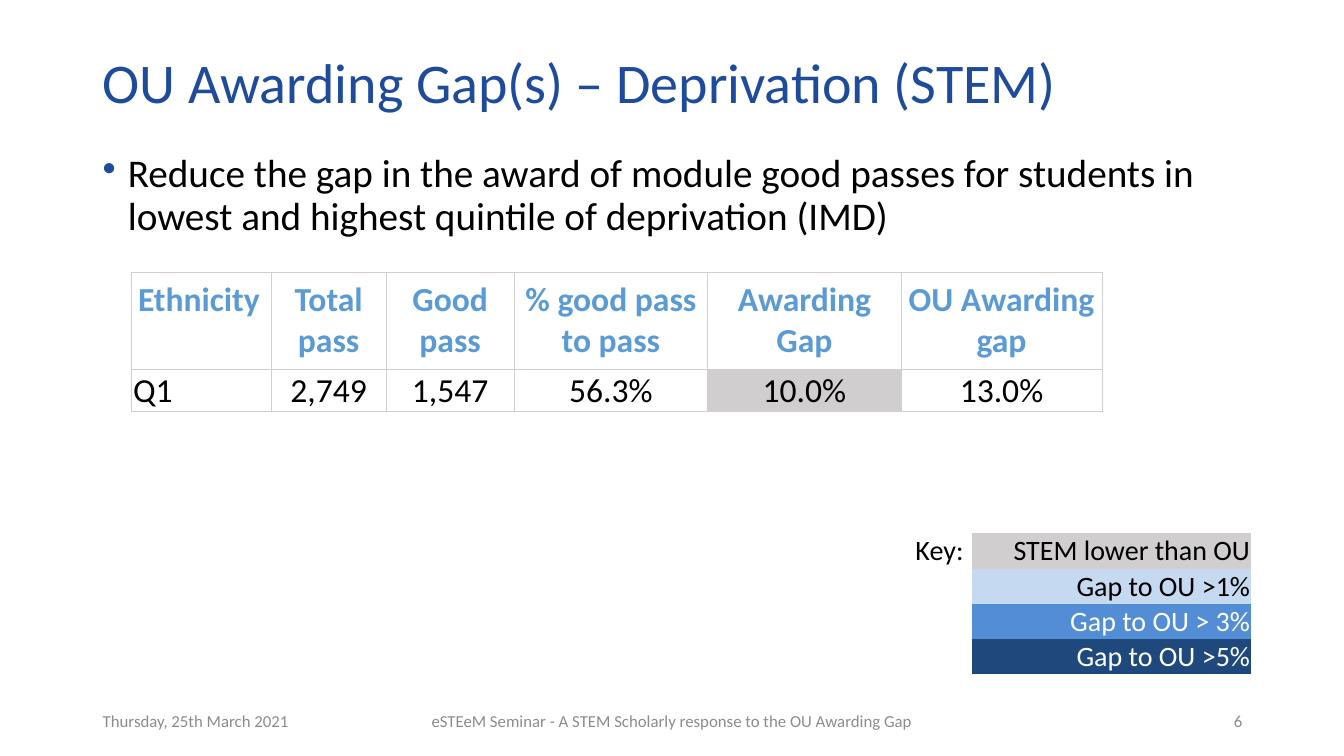
from dataclasses import dataclass

from lxml import etree
from pptx import Presentation
from pptx import util as u
from pptx.dml.color import RGBColor
from pptx.enum import text
from pptx.oxml import ns

PX = 9144  # EMU in one px, 100 px to the inch
FONT = "Calibri"
COLORS = {
    "title": "1E4B9B",
    "ink": "000000",
    "footer": "8C8C8C",
    "header": "5B9BD5",
    "grey": "D0CECE",
    "pale": "C5D9F1",
    "mid": "538DD5",
    "dark": "1F497D",
    "white": "FFFFFF",
}
NO_STYLE = "{2D5ABB26-0587-4C30-8999-92F81FD0307C}"
LEFT, CENTER, RIGHT = text.PP_ALIGN.LEFT, text.PP_ALIGN.CENTER, text.PP_ALIGN.RIGHT
TOP, MIDDLE = text.MSO_ANCHOR.TOP, text.MSO_ANCHOR.MIDDLE


@dataclass(frozen=True)
class Style:
    size: int
    color: str = "ink"
    bold: bool = False
    align: text.PP_ALIGN = LEFT
    anchor: text.MSO_ANCHOR = MIDDLE
    spacing: float = 1.0


@dataclass(frozen=True)
class Label:
    words: str
    box: tuple[int, int, int, int]
    style: Style
    bullet: bool = False


@dataclass(frozen=True)
class Cell:
    words: str
    style: Style
    margins: tuple[int, int, int, int]
    fill: str | None = None
    border: str | None = None


LABELS = [
    Label("OU Awarding Gap(s) – Deprivation (STEM)", (92, 40, 1150, 90),
          Style(40, "title", spacing=0.9)),
    Label("Reduce the gap in the award of module good passes for students in "
          "lowest and highest quintile of deprivation (IMD)", (92, 148, 1150, 530),
          Style(28, anchor=TOP, spacing=0.9), bullet=True),
    Label("Thursday, 25th March 2021", (92, 695, 300, 40), Style(12, "footer")),
    Label("eSTEeM Seminar - A STEM Scholarly response to the OU Awarding Gap",
          (405, 695, 523, 40), Style(12, "footer", align=CENTER)),
    Label("6", (942, 695, 300, 40), Style(12, "footer", align=RIGHT)),
]
GAP_COLUMNS = [
    ("Ethnicity", "Q1", 139),
    ("Total pass", "2,749", 114),
    ("Good pass", "1,547", 127),
    ("% good pass to pass", "56.3%", 192),
    ("Awarding Gap", "10.0%", 192),
    ("OU Awarding gap", "13.0%", 199),
]
KEY_ROWS = [
    ("Key:", "STEM lower than OU", "grey", "ink"),
    ("", "Gap to OU >1%", "pale", "ink"),
    ("", "Gap to OU > 3%", "mid", "white"),
    ("", "Gap to OU >5%", "dark", "white"),
]


def rgb(name: str) -> RGBColor:
    return RGBColor.from_string(COLORS[name])


def add_bullet(p) -> None:
    """Give the paragraph a coloured bullet and a hanging indent."""
    p_pr = p._p.get_or_add_pPr()
    p_pr.set("marL", str(25 * PX))
    p_pr.set("indent", str(-25 * PX))
    color = etree.SubElement(p_pr, ns.qn("a:buClr"))
    etree.SubElement(color, ns.qn("a:srgbClr"), val=COLORS["title"])
    etree.SubElement(p_pr, ns.qn("a:buChar"), char="•")


def style_paragraph(p, style: Style) -> None:
    p.alignment = style.align
    p.line_spacing = style.spacing
    p.font.name = FONT
    p.font.size = u.Pt(style.size)
    p.font.bold = style.bold
    p.font.color.rgb = rgb(style.color)


def add_label(slide, label: Label) -> None:
    tf = slide.shapes.add_textbox(*(n * PX for n in label.box)).text_frame
    tf.word_wrap = True
    tf.vertical_anchor = label.style.anchor
    p = tf.paragraphs[0]
    p.text = label.words
    if label.bullet:
        add_bullet(p)
    style_paragraph(p, label.style)


def add_borders(cell, color: str) -> None:
    tc_pr = cell._tc.get_or_add_tcPr()
    for side in ("lnL", "lnR", "lnT", "lnB"):
        line = etree.SubElement(tc_pr, ns.qn(f"a:{side}"), w=str(u.Pt(0.5)))
        fill = etree.SubElement(line, ns.qn("a:solidFill"))
        etree.SubElement(fill, ns.qn("a:srgbClr"), val=COLORS[color])


def fill_cell(cell, content: Cell) -> None:
    if content.border:
        add_borders(cell, content.border)
    if content.fill:
        cell.fill.solid()
        cell.fill.fore_color.rgb = rgb(content.fill)
    else:
        cell.fill.background()
    cell.vertical_anchor = content.style.anchor
    (cell.margin_left, cell.margin_right,
     cell.margin_top, cell.margin_bottom) = (n * PX for n in content.margins)
    p = cell.text_frame.paragraphs[0]
    if content.words:
        p.text = content.words
    style_paragraph(p, content.style)
    if not content.words:
        end = etree.SubElement(p._p, ns.qn("a:endParaRPr"))
        end.set("sz", str(content.style.size * 100))


def add_grid(slide, left: int, top: int, widths: list[int], heights: list[int],
             rows: list[list[Cell]]) -> None:
    """Draw a table without a built-in style."""
    table = slide.shapes.add_table(
        len(heights), len(widths), left * PX, top * PX,
        sum(widths) * PX, sum(heights) * PX).table
    table.first_row = table.horz_banding = False
    table._tbl.tblPr.find(ns.qn("a:tableStyleId")).text = NO_STYLE
    for column, width in zip(table.columns, widths):
        column.width = width * PX
    for row, height, contents in zip(table.rows, heights, rows):
        row.height = height * PX
        for cell, content in zip(row.cells, contents):
            fill_cell(cell, content)


def add_gap_table(slide) -> None:
    header, values = [], []
    for i, (heading, value, _) in enumerate(GAP_COLUMNS):
        align = CENTER if i else LEFT
        header.append(Cell(heading, Style(24, "header", True, align, TOP),
                           (7, 7, 7, 7), border="grey"))
        values.append(Cell(value, Style(24, align=align, anchor=TOP), (2, 2, 2, 0),
                           "grey" if heading == "Awarding Gap" else None, "grey"))
    widths = [width for _, _, width in GAP_COLUMNS]
    add_grid(slide, 130, 270, widths, [96, 42], [header, values])


def add_key(slide) -> None:
    margins = (1, 1, 1, 0)
    rows = [[Cell(name, Style(20), margins),
             Cell(meaning, Style(20, color, align=RIGHT), margins, fill)]
            for name, meaning, fill, color in KEY_ROWS]
    add_grid(slide, 907, 529, [57, 277], [35] * len(rows), rows)


def main() -> None:
    prs = Presentation()
    prs.slide_width, prs.slide_height = 1333 * PX, 750 * PX
    slide = prs.slides.add_slide(prs.slide_layouts[6])
    for label in LABELS:
        add_label(slide, label)
    add_gap_table(slide)
    add_key(slide)
    prs.save("out.pptx")


if __name__ == "__main__":
    main()
